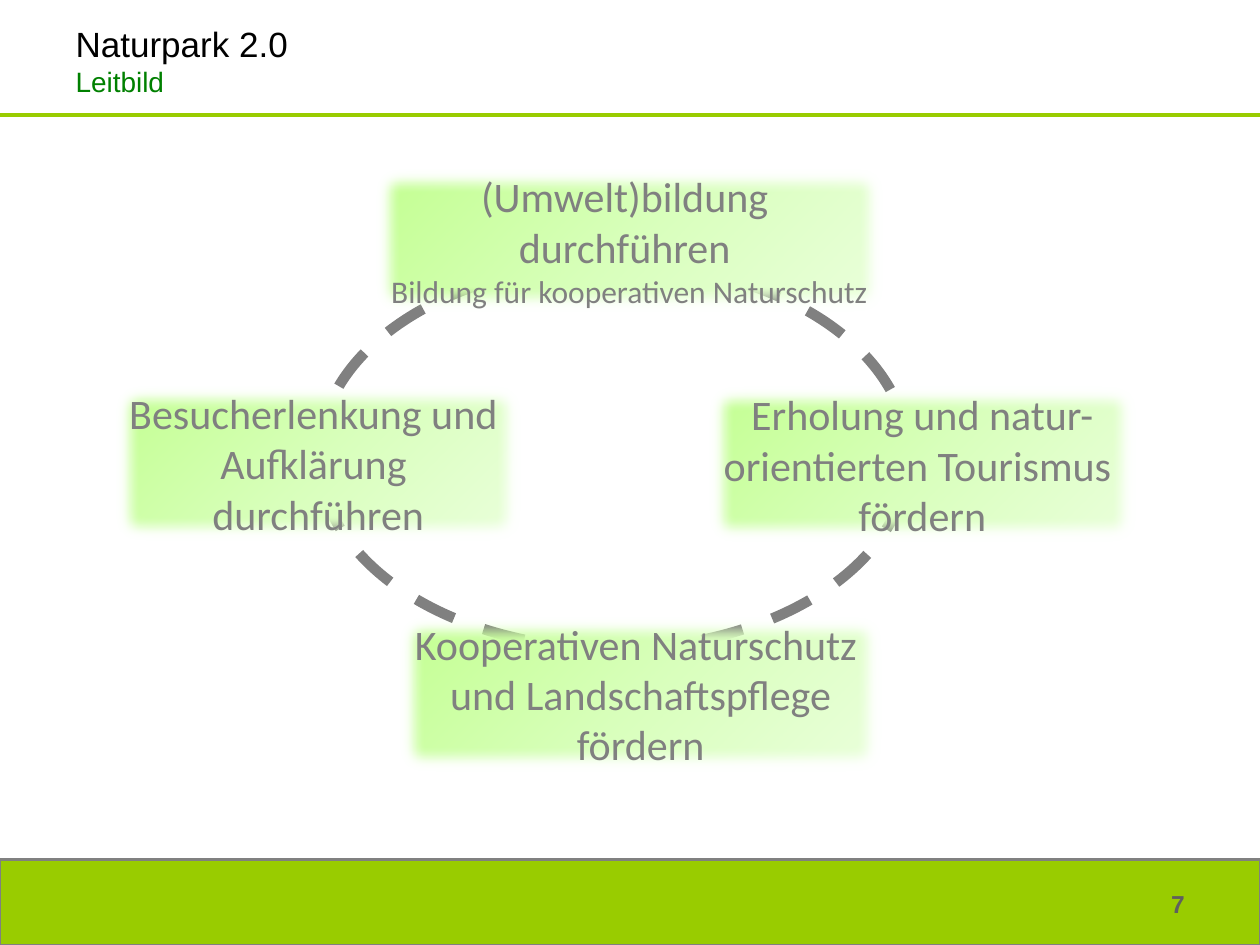
"""Builds the Naturpark 2.0 mission slide with four goals around a dashed ring."""
from copy import deepcopy

from lxml import etree
from pptx import Presentation
from pptx.dml.color import RGBColor
from pptx.enum.dml import MSO_LINE
from pptx.enum.shapes import MSO_CONNECTOR, MSO_SHAPE
from pptx.enum.text import MSO_ANCHOR, MSO_AUTO_SIZE, PP_ALIGN
from pptx.oxml.ns import qn
from pptx.util import Inches, Pt

DASH = MSO_LINE.DASH
STRAIGHT = MSO_CONNECTOR.STRAIGHT
RECTANGLE, OVAL = MSO_SHAPE.RECTANGLE, MSO_SHAPE.OVAL
TOP, MIDDLE = MSO_ANCHOR.TOP, MSO_ANCHOR.MIDDLE
GROW, FIXED = MSO_AUTO_SIZE.SHAPE_TO_FIT_TEXT, MSO_AUTO_SIZE.NONE
LEFT, CENTER, RIGHT = PP_ALIGN.LEFT, PP_ALIGN.CENTER, PP_ALIGN.RIGHT

WIDTH, HEIGHT = 10, 7.5
GREEN, GRAY = "99CC00", "808080"
GRADIENT = ["C2FF8F", "D8FFBB", "EBFFDD"]
SOFT_EDGE = 112500
RING = (2.53, 2.09, 4.68, 3.06)
TITLE_AREA = (0.5, 0.13, 5.44, 0.93)
NUMBER_AREA = (8.78, 7.01, 0.72, 0.52)
RULE_TOP, FOOTER_TOP = 0.91, 6.82

TITLE = [("Naturpark 2.0", 20, "000000"), ("Leitbild", 16, "008000")]
PAGE_NUMBER = "7"
GOALS = [
    ((0.88, 3.02, 3.29, 1.31),
     [("Besucherlenkung und ", 24), ("Aufklärung ", 24), ("durchführen", 24)]),
    ((2.94, 1.3, 4.11, 1.21),
     [("(Umwelt)bildung ", 24), ("durchführen ", 24),
      ("Bildung für kooperativen Naturschutz", 18)]),
    ((3.13, 4.85, 3.91, 1.31),
     [("Kooperativen Naturschutz ", 24), ("und Landschaftspflege", 24), ("fördern", 24)]),
    ((5.59, 3.03, 3.46, 1.31),
     [("Erholung und natur-", 24), ("orientierten Tourismus ", 24), ("fördern", 24)]),
]


def color(value):
    return RGBColor.from_string(value)


def inches(area):
    return [Inches(length) for length in area]


def assign(target, **values):
    for name, value in values.items():
        setattr(target, name, value)


def add_span(para, text, size, shade, font="Arial", bold=False):
    span = para.add_run()
    span.text = text
    assign(span.font, name=font, size=Pt(size), bold=bold)
    span.font.color.rgb = color(shade)


def style_line(line, shade, width):
    line.color.rgb = color(shade)
    line.width = Pt(width)


def add_shape(shapes, kind, area):
    shape = shapes.add_shape(kind, *inches(area))
    shape.shadow.inherit = False
    return shape


def fill_gradient(fill):
    fill.gradient()
    fill.gradient_angle = 315
    first = fill._fill._gradFill.gsLst[0]
    first.addnext(deepcopy(first))
    for index, (stop, shade) in enumerate(zip(fill.gradient_stops, GRADIENT)):
        stop.color.rgb = color(shade)
        stop.position = index / (len(GRADIENT) - 1)


def add_goal(shapes, area, lines):
    box = add_shape(shapes, RECTANGLE, area)
    fill_gradient(box.fill)
    box.line.fill.background()
    effects = box._element.spPr.find(qn("a:effectLst"))
    etree.SubElement(effects, qn("a:softEdge"), rad=str(SOFT_EDGE))
    frame = box.text_frame
    assign(frame, word_wrap=False, auto_size=GROW, vertical_anchor=MIDDLE)
    para = frame.paragraphs[0]
    para.alignment = CENTER
    for index, (text, size) in enumerate(lines):
        if index:
            para.add_line_break()
        add_span(para, text, size, GRAY, "Calibri")


def add_frame(page):
    footer = add_shape(page.shapes, RECTANGLE, (0, FOOTER_TOP, WIDTH, HEIGHT - FOOTER_TOP))
    footer.fill.solid()
    footer.fill.fore_color.rgb = color(GREEN)
    style_line(footer.line, GRAY, 1.5)
    rule = page.shapes.add_connector(STRAIGHT, *inches((WIDTH, RULE_TOP, 0, RULE_TOP)))
    style_line(rule.line, GREEN, 2.25)
    etree.SubElement(rule._element.spPr, qn("a:effectLst"))
    number = page.shapes.add_textbox(*inches(NUMBER_AREA)).text_frame
    number.word_wrap = True
    number.paragraphs[0].alignment = RIGHT
    add_span(number.paragraphs[0], PAGE_NUMBER, 14, "5F5F5F", bold=True)


def add_title(page):
    title = page.shapes.title
    assign(title, **dict(zip(("left", "top", "width", "height"), inches(TITLE_AREA))))
    frame = title.text_frame
    assign(frame, word_wrap=True, auto_size=FIXED, vertical_anchor=TOP)
    for index, (text, size, shade) in enumerate(TITLE):
        para = frame.add_paragraph() if index else frame.paragraphs[0]
        para.alignment = LEFT
        add_span(para, text, size, shade)


def main():
    deck = Presentation()
    assign(deck, slide_width=Inches(WIDTH), slide_height=Inches(HEIGHT))
    page = deck.slides.add_slide(deck.slide_layouts[5])
    add_frame(page)
    cycle = page.shapes.add_group_shape().shapes
    ring = add_shape(cycle, OVAL, RING)
    ring.fill.background()
    style_line(ring.line, GRAY, 6)
    ring.line.dash_style = DASH
    for area, lines in GOALS:
        add_goal(cycle, area, lines)
    add_title(page)
    deck.save("out.pptx")


if __name__ == "__main__":
    main()
